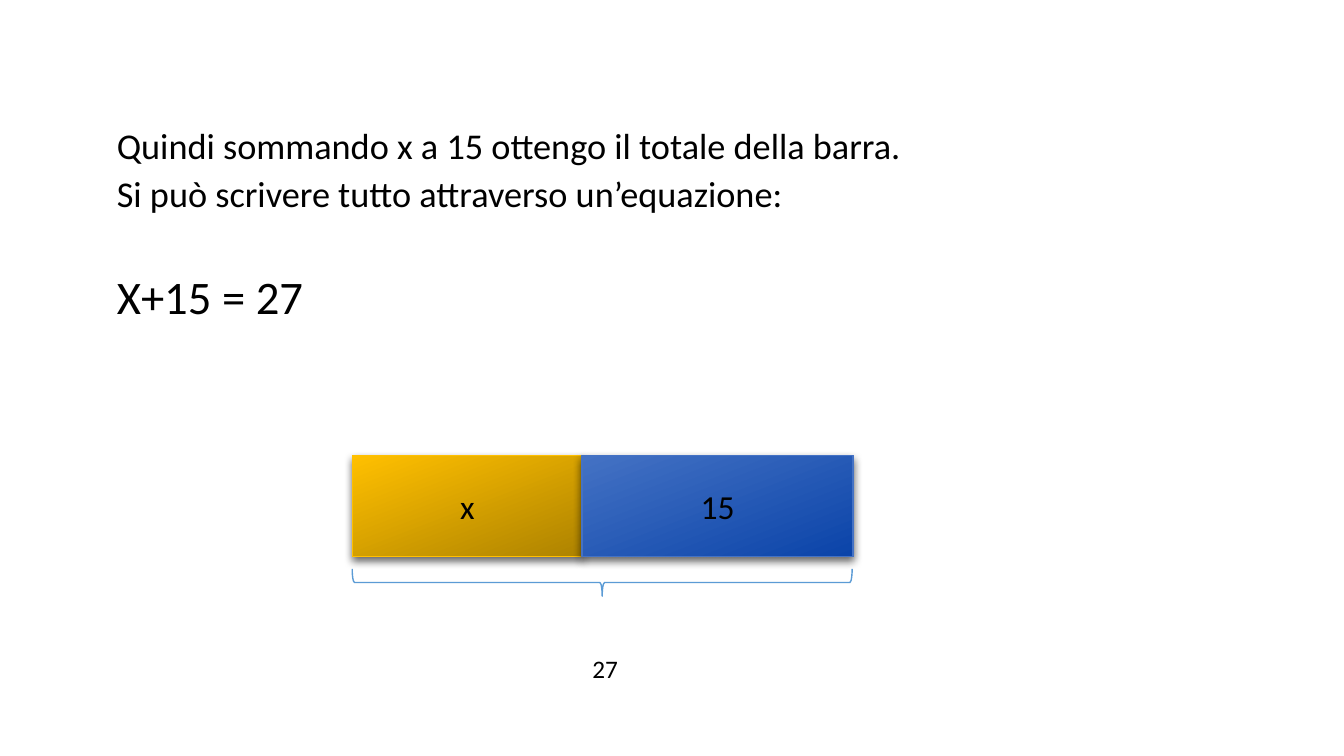
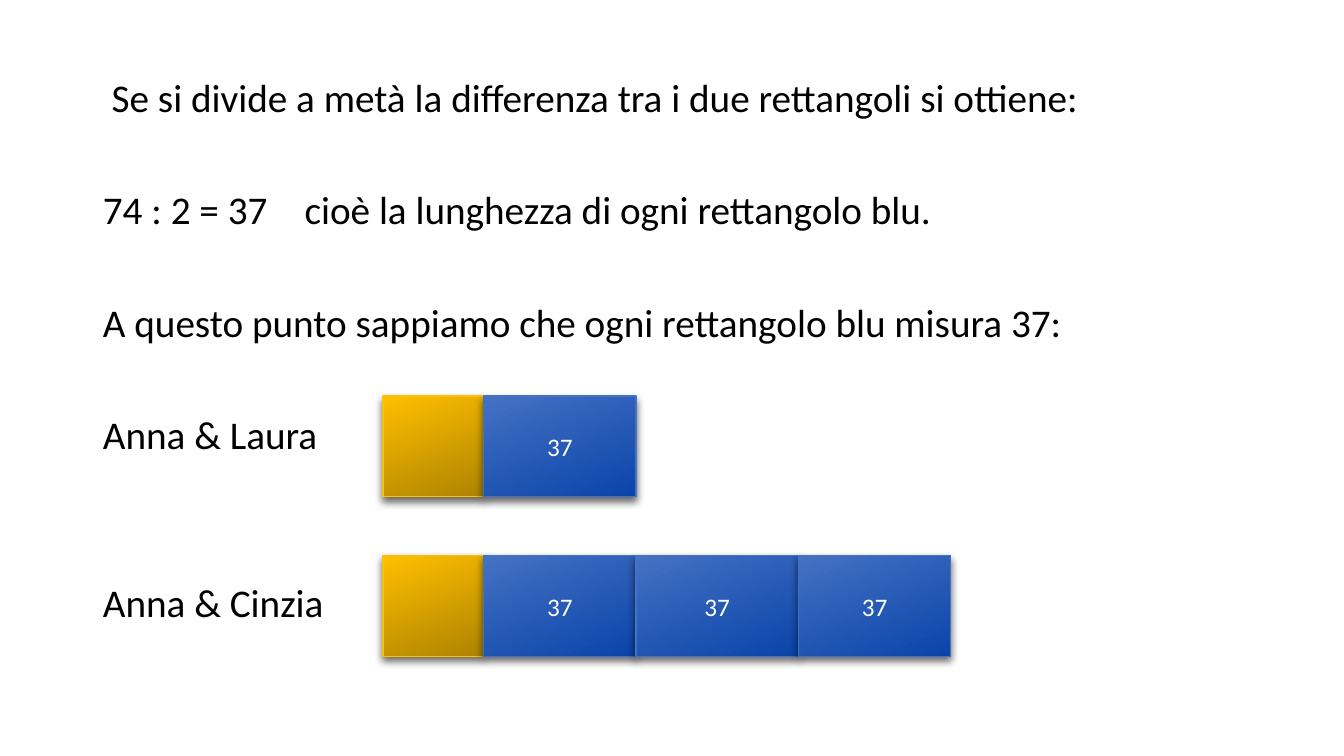
"""Builds two slides that solve word problems with bar models."""
from dataclasses import dataclass

from lxml import etree
from pptx import Presentation
from pptx.dml.color import RGBColor
from pptx.enum.shapes import MSO_SHAPE
from pptx.enum.text import MSO_ANCHOR, MSO_AUTO_SIZE, PP_ALIGN
from pptx.oxml.ns import qn
from pptx.util import Cm, Pt

RECT, BRACE = MSO_SHAPE.RECTANGLE, MSO_SHAPE.RIGHT_BRACE
TOP, MIDDLE = MSO_ANCHOR.TOP, MSO_ANCHOR.MIDDLE
CENTER, LEFT = PP_ALIGN.CENTER, PP_ALIGN.LEFT
NO_FIT = MSO_AUTO_SIZE.NONE


@dataclass(frozen=True)
class Theme:
    font: str = "Calibri"
    black: str = "000000"
    white: str = "FFFFFF"
    gold: tuple = ("FFC000", "AE8300")
    blue: tuple = ("4472C4", "0B44A9")
    brace: str = "5B9BD5"
    text: float = 25.9
    equation: float = 33.3
    large: float = 28
    bar: float = 24
    label: float = 18
    bar_height: float = 2.54


T = Theme()


def write(p, text, size, color, **fmt):
    r = p.add_run()
    r.text = text
    for name, value in {"name": T.font, "size": Pt(size)}.items():
        setattr(r.font, name, value)
    r.font.color.rgb = RGBColor.from_string(color)
    for name, value in fmt.items():
        setattr(p, name, value)


def add_bar(s, left, top, parts, size, color):
    for text, width, (light, dark) in parts:
        sp = s.shapes.add_shape(RECT, Cm(left), Cm(top), Cm(width), Cm(T.bar_height))
        sp.fill.gradient()
        sp.fill.gradient_angle = 291
        for stop, shade in zip(sp.fill.gradient_stops, (light, dark)):
            stop.color.rgb = RGBColor.from_string(shade)
        sp.line.color.rgb = RGBColor.from_string(light)
        sp.line.width = Pt(1)
        sp.shadow.inherit = False
        effects = sp._element.spPr.find(qn("a:effectLst"))
        shadow = etree.SubElement(effects, qn("a:outerShdw"), blurRad=str(Pt(6)),
                                  dist=str(Pt(3)), dir="5400000", rotWithShape="0")
        tint = etree.SubElement(shadow, qn("a:srgbClr"), val=T.black)
        etree.SubElement(tint, qn("a:alpha"), val="60000")
        if text:
            sp.text_frame.vertical_anchor = MIDDLE
            write(sp.text_frame.paragraphs[0], text, size, color, alignment=CENTER)
        left += width


prs = Presentation()
prs.slide_width, prs.slide_height = Cm(33.87), Cm(19.05)

bodies = [
    {"box": (2.69, 3.18, 28.85, 8), "spacing": 0.8, "lines": [
        ("Quindi sommando x a 15 ottengo il totale della barra.", T.text, 0, 0),
        ("Si può scrivere tutto attraverso un’equazione:", T.text, 10, 0),
        ("X+15 = 27", T.equation, 45.3, 0)]},
    {"box": (2.34, 1.85, 29.21, 15.29), "spacing": 0.9, "lines": [
        ("Se si divide a metà la differenza tra i due rettangoli si ottiene:", T.large, 0, 0.22),
        ("74 : 2 = 37\tcioè la lunghezza di ogni rettangolo blu.", T.large, 50, 0),
        ("A questo punto sappiamo che ogni rettangolo blu misura 37:", T.large, 50, 0),
        ("Anna & Laura", T.large, 50, 0),
        ("Anna & Cinzia", T.large, 90, 0)]},
]

slides = []
for body in bodies:
    s = prs.slides.add_slide(prs.slide_layouts[1])
    slides.append(s)
    title = s.shapes.title._element
    title.getparent().remove(title)
    sp = s.placeholders[1]
    for name, value in zip(("left", "top", "width", "height"), body["box"]):
        setattr(sp, name, Cm(value))
    tf = sp.text_frame
    for name, value in {"auto_size": NO_FIT, "word_wrap": True, "vertical_anchor": TOP}.items():
        setattr(tf, name, value)
    for i, (text, size, before, indent) in enumerate(body["lines"]):
        p = tf.add_paragraph() if i else tf.paragraphs[0]
        write(p, text, size, T.black, alignment=LEFT,
              line_spacing=body["spacing"], space_before=Pt(before))
        pPr = p._p.get_or_add_pPr()
        pPr.set("marL", str(Cm(indent)))
        pPr.set("indent", "0")
        etree.SubElement(pPr, qn("a:buNone"))
        if "\t" in text:
            tabs = etree.SubElement(pPr, qn("a:tabLst"))
            etree.SubElement(tabs, qn("a:tab"), pos=str(Cm(4.82)), algn="l")

equation, halves = slides

add_bar(equation, 8.89, 11.48, [("x", 5.78, T.gold), ("15", 6.83, T.blue)], T.bar, T.black)

sp = equation.shapes.add_shape(BRACE, Cm(14.83), Cm(8.38), Cm(0.69), Cm(12.6))
sp.rotation = 90
sp.fill.background()
sp.line.color.rgb = RGBColor.from_string(T.brace)
sp.line.width = Pt(1)
sp.shadow.inherit = False

sp = equation.shapes.add_textbox(Cm(14.26), Cm(16.33), Cm(1.98), Cm(1.03))
sp.text_frame.word_wrap = True
write(sp.text_frame.paragraphs[0], "27", T.label, T.black, alignment=CENTER)

for top, widths in ((9.98, [3.84]), (14, [3.84, 4.09, 3.84])):
    parts = [("", 2.54, T.gold)] + [("37", width, T.blue) for width in widths]
    add_bar(halves, 9.65, top, parts, T.label, T.white)

prs.save("out.pptx")
